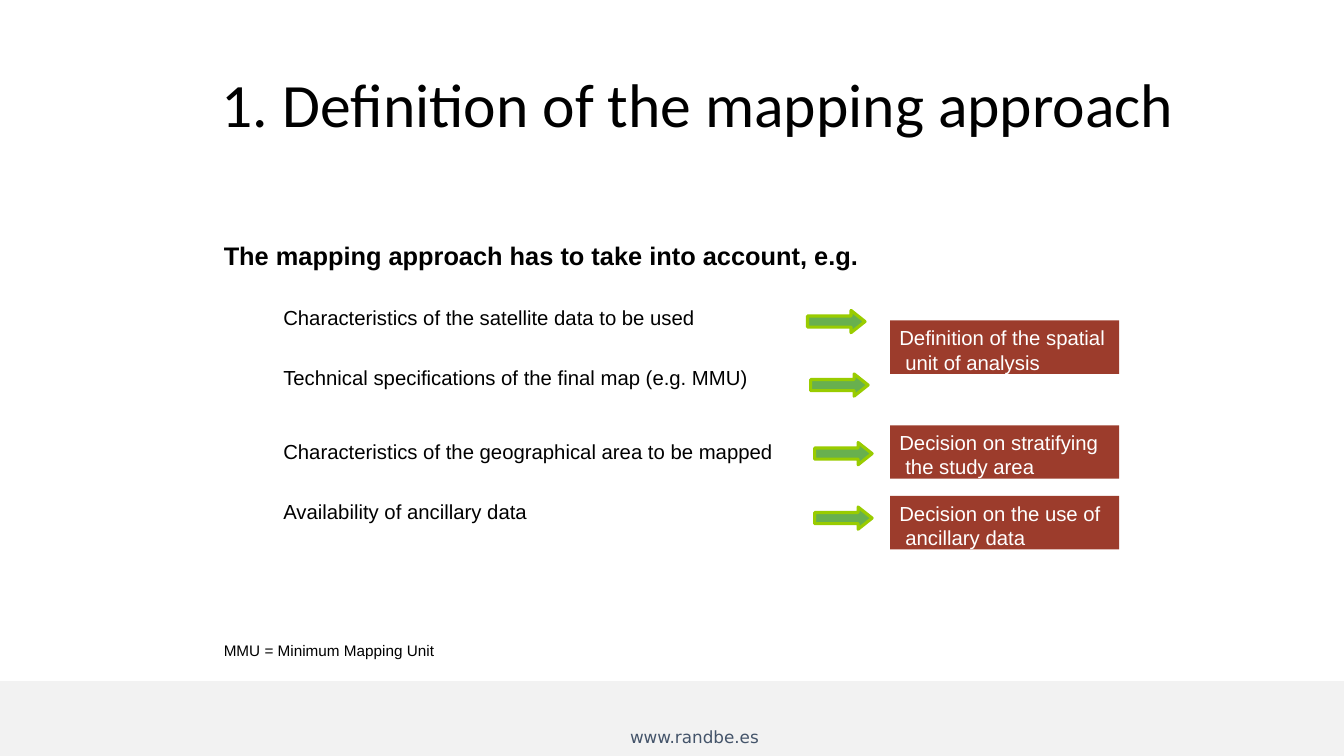
from pptx import Presentation
from pptx.dml.color import RGBColor
from pptx.enum.shapes import MSO_SHAPE
from pptx.enum.text import MSO_ANCHOR, PP_ALIGN
from pptx.util import Inches, Pt

RECTANGLE = MSO_SHAPE.RECTANGLE
RIGHT_ARROW = MSO_SHAPE.RIGHT_ARROW
TOP, MIDDLE = MSO_ANCHOR.TOP, MSO_ANCHOR.MIDDLE
LEFT = PP_ALIGN.LEFT

COLORS = {
    "text": "000000",
    "white": "FFFFFF",
    "decision": "9C3C2C",
    "arrow": "68B04E",
    "arrow_line": "99CC00",
    "footer": "F2F2F2",
    "footer_text": "44546A",
}
BODY_SIZE = 14.5
TITLE_ONLY = 5

# Text and top of each consideration, then left and top of its arrow
CONSIDERATIONS = [
    ("Characteristics of the satellite data to be used", 3.03, 8.01, 3.08),
    ("Technical specifications of the final map (e.g. MMU)", 3.62, 8.04, 3.71),
    ("Characteristics of the geographical area to be mapped", 4.36, 8.08, 4.39),
    ("Availability of ancillary data", 4.95, 8.08, 5.03),
]
DECISIONS = [
    ("Definition of the spatial unit of analysis", 3.18),
    ("Decision on stratifying the study area", 4.22),
    ("Decision on the use of ancillary data", 4.92),
]


def color(name):
    return RGBColor.from_string(COLORS[name])


def write(shape, text, size, color_name="text", font="Arial", bold=False,
          anchor=TOP, margins=(0, 0, 0, 0)):
    """Fill a shape with one left-aligned run and return its paragraph."""
    frame = shape.text_frame
    frame.word_wrap = True
    frame.vertical_anchor = anchor
    (frame.margin_left, frame.margin_top,
     frame.margin_right, frame.margin_bottom) = map(Inches, margins)
    paragraph = frame.paragraphs[0]
    paragraph.alignment = LEFT
    run = paragraph.add_run()
    run.text = text
    run.font.size = Pt(size)
    run.font.name = font
    run.font.bold = bold
    run.font.color.rgb = color(color_name)
    return paragraph


def add_text(slide, box, text, size, **style):
    textbox = slide.shapes.add_textbox(*map(Inches, box))
    write(textbox, text, size, **style)


def add_filled(slide, kind, box, fill, line=None, width=1):
    shape = slide.shapes.add_shape(kind, *map(Inches, box))
    shape.shadow.inherit = False
    shape.fill.solid()
    shape.fill.fore_color.rgb = color(fill)
    if line:
        shape.line.color.rgb = color(line)
        shape.line.width = Pt(width)
    else:
        shape.line.fill.background()
    return shape


def add_footer(slide, box):
    left, top, width, height = box
    add_filled(slide, RECTANGLE, box, "footer", "footer")
    add_text(slide, (left + 6.15, top + 0.4, 1.72, 0.3), "www.randbe.es", 12,
             color_name="footer_text", font="DejaVu Sans",
             margins=(0.1, 0.05, 0.1, 0.05))


def add_title(slide, box):
    title = slide.shapes.title
    title.left, title.top, title.width, title.height = map(Inches, box)
    write(title, "1. Definition of the mapping approach", 44,
          font="Calibri", anchor=MIDDLE, margins=(0.01, 0, 0, 0))


def add_considerations(slide, box):
    left, top, width, height = box
    add_text(slide, (left, top, width, 0.29),
             "The mapping approach has to take into account, e.g.", 18.1,
             bold=True, margins=(0.01, 0, 0, 0))
    for text, text_top, arrow_left, arrow_top in CONSIDERATIONS:
        add_text(slide, (left + 0.59, text_top, 5, 0.24), text, BODY_SIZE,
                 margins=(0.01, 0, 0, 0))
        arrow = add_filled(slide, RIGHT_ARROW, (arrow_left, arrow_top, 0.57, 0.22),
                           "arrow", "arrow_line", 2.25)
        arrow.adjustments[0] = 0.5
        arrow.adjustments[1] = 0.63
    add_text(slide, (left, top + height, 2.3, 0.18),
             "MMU = Minimum Mapping Unit", 10.9, margins=(0.01, 0, 0, 0))


def add_decisions(slide, left, width):
    for text, top in DECISIONS:
        shape = add_filled(slide, RECTANGLE, (left, top, width, 0.53), "decision")
        paragraph = write(shape, text, BODY_SIZE, "white", margins=(0, 0.05, 0, 0))
        properties = paragraph._p.get_or_add_pPr()
        properties.set("marL", str(Inches(0.15)))
        properties.set("indent", str(Inches(-0.06)))


def main():
    presentation = Presentation()
    presentation.slide_width = Inches(13.33)
    presentation.slide_height = Inches(7.5)
    slide = presentation.slides.add_slide(presentation.slide_layouts[TITLE_ONLY])
    add_footer(slide, (0, 6.76, 13.33, 0.74))
    add_title(slide, (2.19, 0.65, 10.44, 0.74))
    add_considerations(slide, (2.21, 2.38, 6.6, 3.98))
    add_decisions(slide, 8.83, 2.27)
    presentation.save("out.pptx")


if __name__ == "__main__":
    main()
